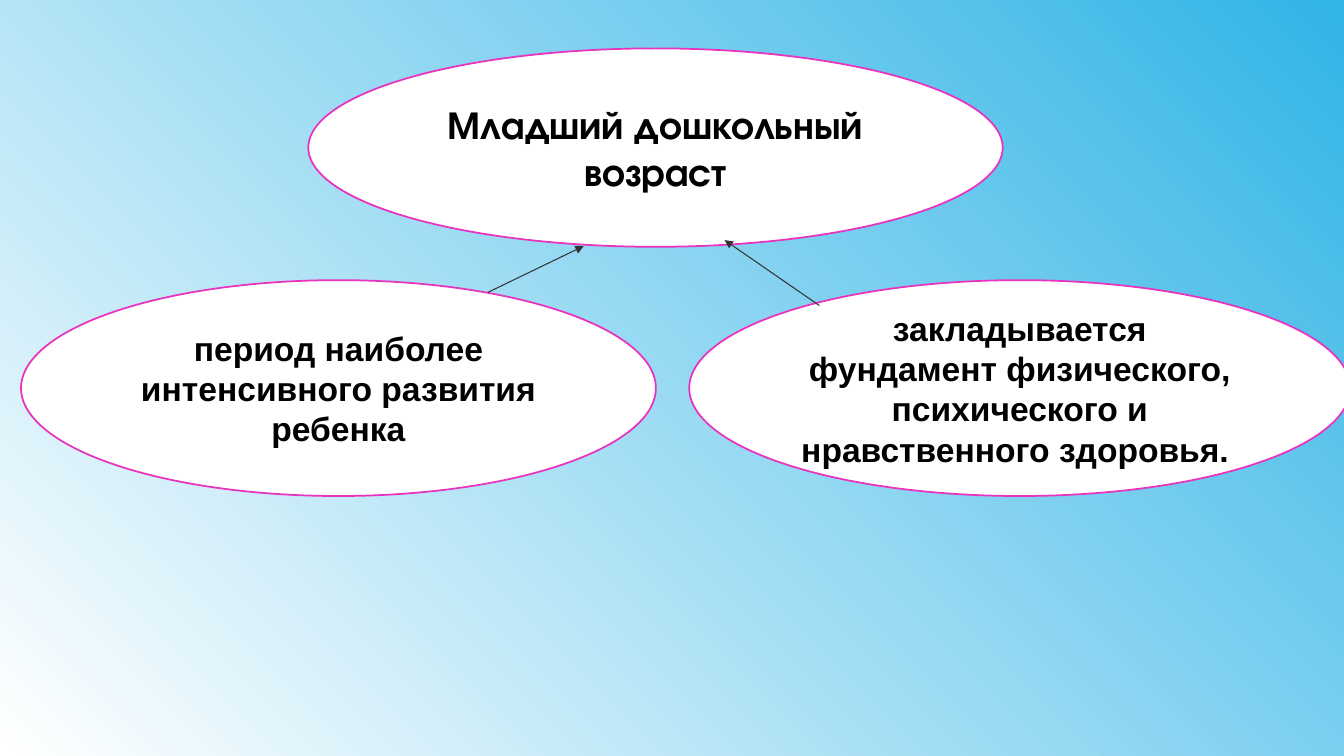
from lxml import etree
from pptx import Presentation
from pptx.dml.color import RGBColor
from pptx.enum.shapes import MSO_CONNECTOR, MSO_SHAPE
from pptx.enum.text import MSO_ANCHOR, PP_ALIGN
from pptx.oxml.ns import qn
from pptx.util import Cm, Pt

OVAL = MSO_SHAPE.OVAL
STRAIGHT = MSO_CONNECTOR.STRAIGHT
CENTER = PP_ALIGN.CENTER
MIDDLE = MSO_ANCHOR.MIDDLE

WHITE = RGBColor(0xFF, 0xFF, 0xFF)
BLACK = RGBColor(0x00, 0x00, 0x00)
SKY = RGBColor(0x31, 0xB4, 0xE6)
PINK = RGBColor(0xE8, 0x33, 0xBF)
GRAY = RGBColor(0x33, 0x33, 0x33)

TOPIC_FONT = {"name": "TeX Gyre Adventor", "size": Pt(28), "bold": True}
FEATURE_FONT = {"name": "Arial", "size": Pt(24), "bold": True}

# Ellipses and arrows in cm, measured from the corner of the diagram
TOPIC = ((7.24, 0, 17.5, 5), "Младший дошкольный возраст")
FEATURES = [
    ((0, 5.84, 16, 5.44), "период наиболее интенсивного развития ребенка"),
    ((16.84, 5.84, 16.66, 5.44),
     "закладывается фундамент физического, психического и "
     "нравственного здоровья. "),
]
ARROWS = [((11.76, 6.15), (14.18, 4.98)), ((20.12, 6.48), (17.73, 4.83))]


def paint_background(page):
    """Diagonal gradient, white at bottom left to blue at top right."""
    fill = page.background.fill
    fill.gradient()
    fill.gradient_angle = 45
    for stop, color, position in zip(fill.gradient_stops, (WHITE, SKY), (0, 1)):
        stop.color.rgb = color
        stop.position = position


def add_ellipse(page, left, top, width, height, text, font_format):
    ellipse = page.shapes.add_shape(
        OVAL, Cm(left), Cm(top), Cm(width), Cm(height))
    ellipse.shadow.inherit = False
    ellipse.fill.solid()
    ellipse.fill.fore_color.rgb = WHITE
    ellipse.line.color.rgb = PINK
    ellipse.line.width = Pt(1.25)
    frame = ellipse.text_frame
    frame.word_wrap = True
    frame.vertical_anchor = MIDDLE
    para = frame.paragraphs[0]
    para.alignment = CENTER
    span = para.add_run()
    span.text = text
    for name, value in font_format.items():
        setattr(span.font, name, value)
    span.font.color.rgb = BLACK


def add_arrow(page, start_x, start_y, end_x, end_y):
    arrow = page.shapes.add_connector(
        STRAIGHT, Cm(start_x), Cm(start_y), Cm(end_x), Cm(end_y))
    arrow.line.color.rgb = GRAY
    arrow.line.width = Pt(0.75)
    etree.SubElement(arrow.line._get_or_add_ln(), qn("a:tailEnd"),
                     type="triangle")
    etree.SubElement(arrow._element.spPr, qn("a:effectLst"))


def add_age_diagram(page, left, top):
    """Topic ellipse with two features pointing up to it."""
    nodes = [(*TOPIC, TOPIC_FONT)]
    nodes += [(box, text, FEATURE_FONT) for box, text in FEATURES]
    for (x, y, width, height), text, font_format in nodes:
        add_ellipse(page, left + x, top + y, width, height, text, font_format)
    for (start_x, start_y), (end_x, end_y) in ARROWS:
        add_arrow(page, left + start_x, top + start_y,
                  left + end_x, top + end_y)


def main():
    deck = Presentation()
    deck.slide_width, deck.slide_height = Cm(33.87), Cm(19.05)
    page = deck.slides.add_slide(deck.slide_layouts[6])
    paint_background(page)
    add_age_diagram(page, left=0.53, top=1.22)
    deck.save("out.pptx")


if __name__ == "__main__":
    main()
